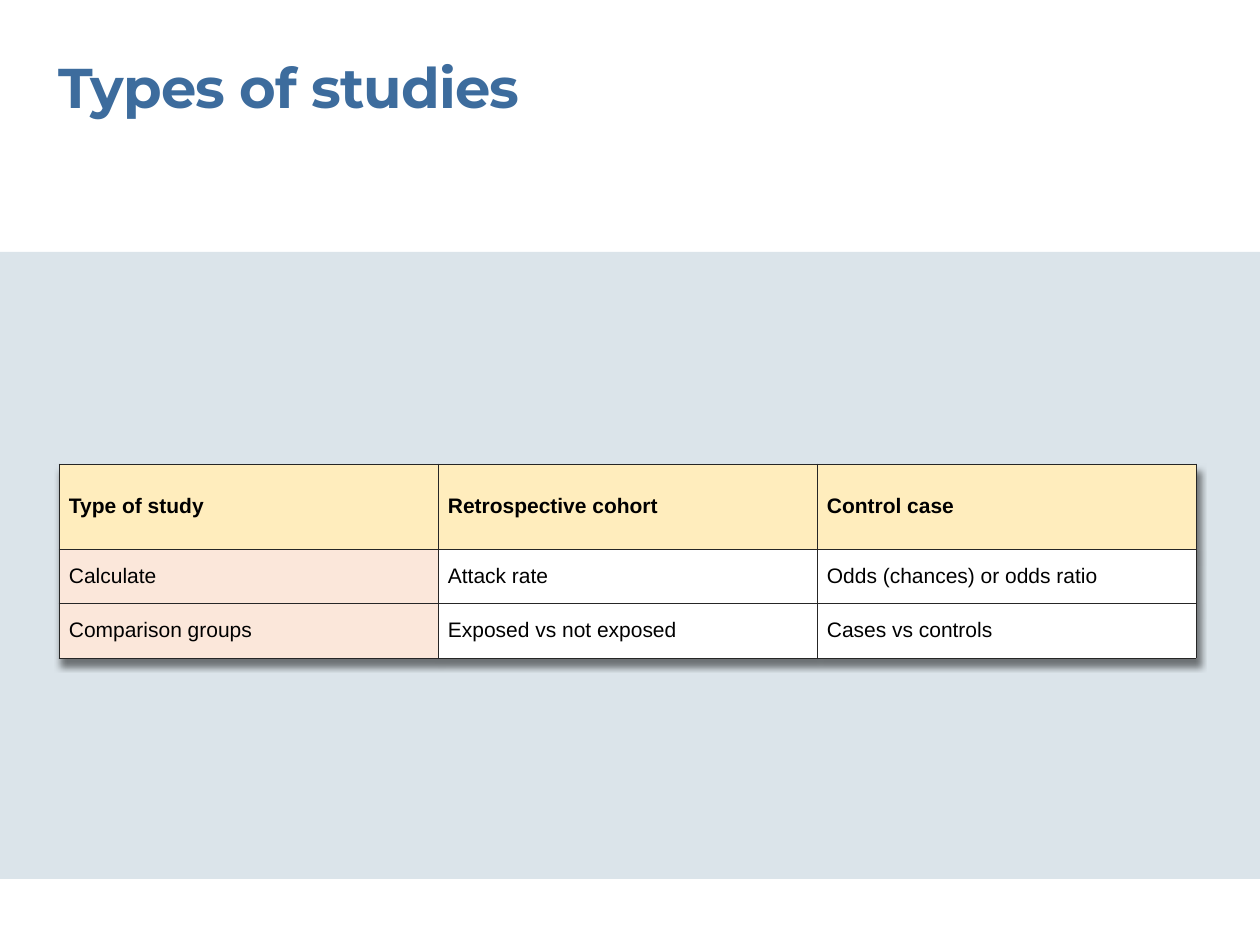
from dataclasses import dataclass
from lxml.etree import SubElement
from pptx import Presentation
from pptx.dml.color import RGBColor as Rgb
from pptx.enum.shapes import MSO_SHAPE as Shape
from pptx.enum.text import MSO_ANCHOR as Anchor, MSO_AUTO_SIZE as Fit
from pptx.oxml.ns import qn
from pptx.util import Emu, Pt

SCALE = 914400 / 126  # EMU in one px


@dataclass(frozen=True)
class Theme:
    band: str = "DBE4EA"
    title: str = "3D6C9D"
    text: str = "000000"
    head: str = "FFEDBD"
    side: str = "FBE7DA"
    cell: str = "FFFFFF"
    rule: str = "262626"
    big: int = 32
    small: int = 12
    display: str = "Montserrat"
    body: str = "Arial"


THEME = Theme()

ROWS = [
    ["Type of study", "Retrospective cohort", "Control case"],
    ["Calculate", "Attack rate", "Odds (chances) or odds ratio"],
    ["Comparison groups", "Exposed vs not exposed", "Cases vs controls"],
]


def px(n):
    return Emu(round(n * SCALE))


def assign(item, values):
    for name, value in values.items():
        setattr(item, name, value)


def paint(fill, color):
    fill.solid()
    fill.fore_color.rgb = Rgb.from_string(color)


def write(para, text, color, **style):
    run = para.add_run()
    run.text = text
    assign(run.font, style)
    run.font.color.rgb = Rgb.from_string(color)
    return run


def add_band(slide, *box):
    band = slide.shapes.add_shape(Shape.RECTANGLE, *map(px, box))
    band.shadow.inherit = False
    paint(band.fill, THEME.band)
    band.line.fill.background()


def add_title(slide, text, *box):
    frame = slide.shapes.add_textbox(*map(px, box)).text_frame
    sides = ("left", "top", "right", "bottom")
    assign(frame, {f"margin_{side}": 0 for side in sides})
    assign(frame, {"word_wrap": True, "auto_size": Fit.SHAPE_TO_FIT_TEXT})
    run = write(frame.paragraphs[0], text, THEME.title,
                name=THEME.display, size=Pt(THEME.big), bold=True)
    run.font._element.set("spc", "-50")


def add_rules(cell):
    props = cell._tc.get_or_add_tcPr()
    for spot, side in enumerate("LRTB"):
        line = SubElement(props, qn(f"a:ln{side}"), w=str(Pt(0.5)))
        fill = SubElement(line, qn("a:solidFill"))
        SubElement(fill, qn("a:srgbClr"), val=THEME.rule)
        props.insert(spot, line)  # borders come before the fill


def add_shadow(table):
    props = table._tbl.tblPr
    effects = SubElement(props, qn("a:effectLst"))
    props.insert(0, effects)
    shade = SubElement(effects, qn("a:outerShdw"), blurRad=str(Pt(4)),
                       dist=str(Pt(4)), dir="4200000", algn="tl",
                       rotWithShape="0")
    color = SubElement(shade, qn("a:srgbClr"), val=THEME.text)
    SubElement(color, qn("a:alpha"), val="50000")


def add_grid(slide, rows, left, top, width, heights):
    count = len(rows[0])
    table = slide.shapes.add_table(
        len(rows), count, px(left), px(top),
        px(width * count), px(sum(heights))).table
    for col in table.columns:
        col.width = px(width)
    for row, height in zip(table.rows, heights):
        row.height = px(height)
    form = {"vertical_anchor": Anchor.MIDDLE,
            "margin_left": px(10), "margin_right": px(10),
            "margin_top": px(6), "margin_bottom": px(6)}
    for r, words in enumerate(rows):
        for c, text in enumerate(words):
            cell = table.cell(r, c)
            assign(cell, form)
            paint(cell.fill, THEME.head if r == 0
                  else THEME.side if c == 0 else THEME.cell)
            write(cell.text_frame.paragraphs[0], text, THEME.text,
                  name=THEME.body, size=Pt(THEME.small), bold=r == 0)
            add_rules(cell)
    add_shadow(table)


def main():
    deck = Presentation()
    assign(deck, {"slide_width": px(1260), "slide_height": px(945)})
    slide = deck.slides.add_slide(deck.slide_layouts[6])
    # Background band and heading
    add_band(slide, 0, 252, 1260, 627)
    add_title(slide, "Types of studies", 59, 53, 738, 68)
    # Comparison of the two study types
    add_grid(slide, ROWS, 59, 464, 379, [85, 54, 55])
    deck.save("out.pptx")


if __name__ == "__main__":
    main()
